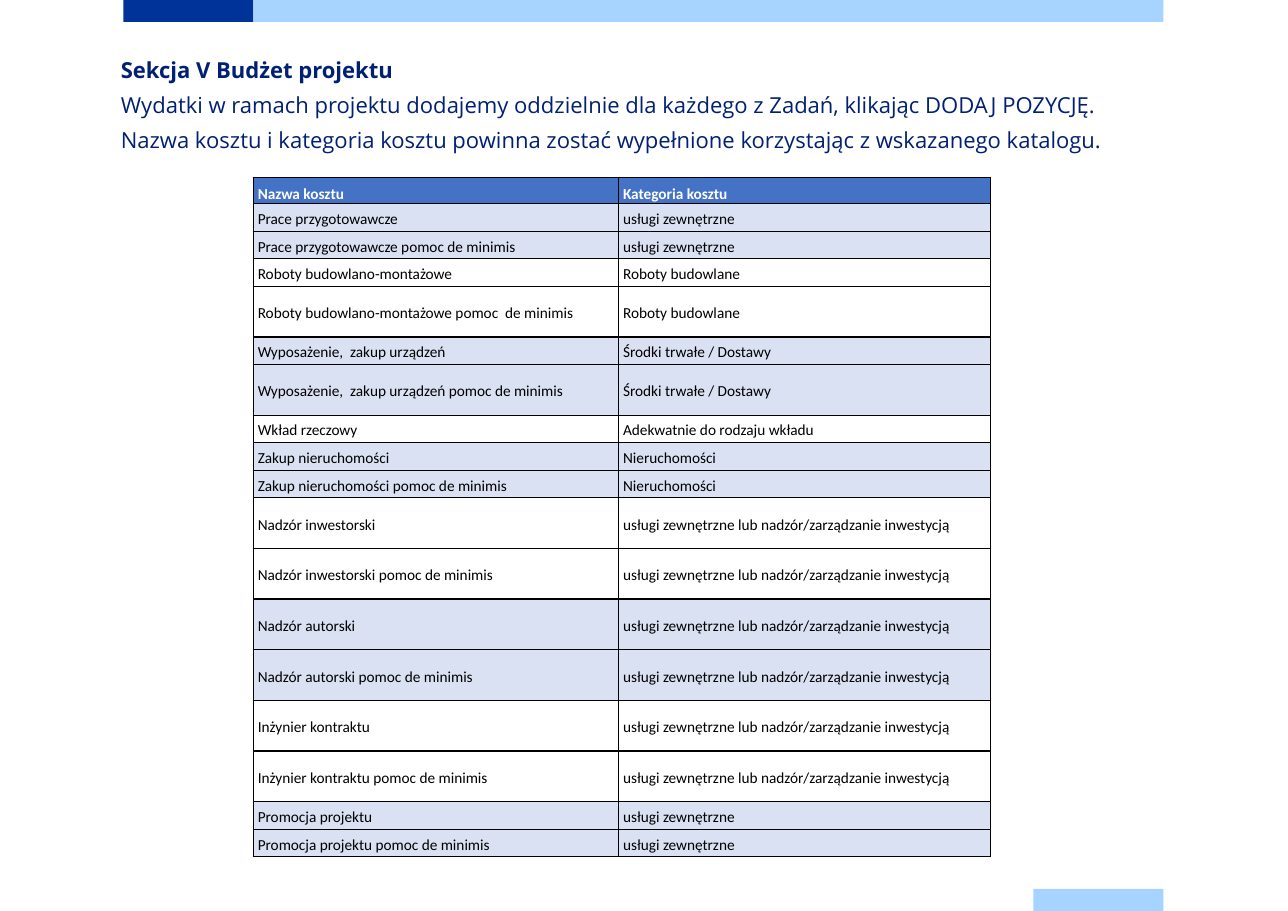
from dataclasses import dataclass

from lxml import etree
from pptx import Presentation
from pptx import util as u
from pptx.dml.color import RGBColor
from pptx.enum import shapes, text
from pptx.oxml import ns

NAVY = RGBColor(0x00, 0x33, 0x99)
SKY = RGBColor(0xA6, 0xD3, 0xFF)
TITLE_BLUE = RGBColor(0x00, 0x20, 0x73)
HEADER_BLUE = RGBColor(0x44, 0x72, 0xC4)
PALE_BLUE = RGBColor(0xD9, 0xE1, 0xF2)
WHITE = RGBColor(0xFF, 0xFF, 0xFF)
BLACK = RGBColor(0x00, 0x00, 0x00)

# Grid: eight columns between the margins, rows as high as the bars
MARGIN, COLUMN, ROW = 1.12, 1.18, 0.2
PAGE_WIDTH, PAGE_HEIGHT = 11.69, 8.27
LAST_ROW = PAGE_HEIGHT / ROW - 1
HEADER_ROW, LOW_ROW, TALL_ROW = 1.2, 1.25, 2.3
COST_COLUMNS = (2.81, 2.86)


@dataclass
class Bar:
    column: float
    row: float
    columns: float
    color: RGBColor


@dataclass
class Cost:
    name: str
    category: str
    shaded: bool = False
    rows: float = LOW_ROW


SERVICES = "usługi zewnętrzne"
SUPERVISION = "usługi zewnętrzne lub nadzór/zarządzanie inwestycją"
WORKS = "Roboty budowlane"
ASSETS = "Środki trwałe / Dostawy"
PROPERTY = "Nieruchomości"

BARS = [Bar(0, 0, 1, NAVY), Bar(1, 0, 7, SKY), Bar(7, LAST_ROW, 1, SKY)]
TITLE_LINES = [
    "Sekcja V Budżet projektu",
    "Wydatki w ramach projektu dodajemy oddzielnie dla każdego z Zadań, klikając DODAJ POZYCJĘ.",
    "Nazwa kosztu i kategoria kosztu powinna zostać wypełnione korzystając z wskazanego katalogu.",
]
COSTS = [
    Cost("Prace przygotowawcze", SERVICES, True),
    Cost("Prace przygotowawcze pomoc de minimis", SERVICES, True),
    Cost("Roboty budowlano-montażowe", WORKS),
    Cost("Roboty budowlano-montażowe pomoc  de minimis", WORKS, rows=TALL_ROW),
    Cost("Wyposażenie,  zakup urządzeń", ASSETS, True),
    Cost("Wyposażenie,  zakup urządzeń pomoc de minimis", ASSETS, True, TALL_ROW),
    Cost("Wkład rzeczowy", "Adekwatnie do rodzaju wkładu"),
    Cost("Zakup nieruchomości", PROPERTY, True),
    Cost("Zakup nieruchomości pomoc de minimis", PROPERTY, True),
    Cost("Nadzór inwestorski", SUPERVISION, rows=TALL_ROW),
    Cost("Nadzór inwestorski pomoc de minimis", SUPERVISION, rows=TALL_ROW),
    Cost("Nadzór autorski", SUPERVISION, True, TALL_ROW),
    Cost("Nadzór autorski pomoc de minimis", SUPERVISION, True, TALL_ROW),
    Cost("Inżynier kontraktu", SUPERVISION, rows=TALL_ROW),
    Cost("Inżynier kontraktu pomoc de minimis", SUPERVISION, rows=TALL_ROW),
    Cost("Promocja projektu", SERVICES, True),
    Cost("Promocja projektu pomoc de minimis", SERVICES, True),
]


def wide(columns: float) -> u.Length:
    return u.Inches(columns * COLUMN)


def high(rows: float) -> u.Length:
    return u.Inches(rows * ROW)


def across(column: float) -> u.Length:
    return u.Inches(MARGIN + column * COLUMN)


def write(para, words: str, *, font: str, size: float, color: RGBColor,
          bold: bool = False, spacing: float = 1, after: float = 0) -> None:
    para.alignment = text.PP_ALIGN.LEFT
    para.line_spacing = spacing
    para.space_after = u.Pt(after)
    span = para.add_run()
    span.text = words
    span.font.name, span.font.size = font, u.Pt(size)
    span.font.bold = bold
    span.font.color.rgb = color


def draw_bar(page, bar: Bar) -> None:
    box = page.shapes.add_shape(
        shapes.MSO_SHAPE.RECTANGLE, across(bar.column), high(bar.row),
        wide(bar.columns), high(1))
    box.shadow.inherit = False
    box.fill.solid()
    box.fill.fore_color.rgb = bar.color
    box.line.fill.background()


def draw_title(page) -> None:
    title = page.shapes.title
    title.left, title.top = across(-0.02), high(2.15)
    title.width, title.height = wide(8), high(5.9)
    frame = title.text_frame
    frame.margin_left = frame.margin_right = frame.margin_top = frame.margin_bottom = 0
    frame.auto_size = text.MSO_AUTO_SIZE.NONE
    frame.word_wrap = True
    frame.vertical_anchor = text.MSO_ANCHOR.TOP
    para = frame.paragraphs[0]
    for index, line in enumerate(TITLE_LINES):
        if index:
            para.add_line_break()
        write(para, line, font="Open Sans", size=14.4, color=TITLE_BLUE,
              bold=index == 0, spacing=1.33)


def add_borders(cell) -> None:
    properties = cell._tc.get_or_add_tcPr()
    for side in ("a:lnL", "a:lnR", "a:lnT", "a:lnB"):
        line = etree.SubElement(properties, ns.qn(side), w=str(u.Pt(1)))
        fill = etree.SubElement(line, ns.qn("a:solidFill"))
        etree.SubElement(fill, ns.qn("a:srgbClr"), val=str(BLACK))


def fill_cell(cell, words: str, *, fill: RGBColor | None, color: RGBColor = BLACK,
              bold: bool = False, anchor=text.MSO_ANCHOR.MIDDLE) -> None:
    cell.margin_left = cell.margin_right = u.Inches(0.04)
    cell.margin_top = cell.margin_bottom = 0
    cell.vertical_anchor = anchor
    add_borders(cell)
    if fill is None:
        cell.fill.background()
    else:
        cell.fill.solid()
        cell.fill.fore_color.rgb = fill
    write(cell.text_frame.paragraphs[0], words, font="Calibri", size=10,
          color=color, bold=bold, spacing=1.19, after=6)


def draw_costs(page) -> None:
    heights = [HEADER_ROW] + [cost.rows for cost in COSTS]
    table = page.shapes.add_table(
        len(heights), len(COST_COLUMNS), across(1), high(8.05),
        wide(sum(COST_COLUMNS)), high(sum(heights))).table
    table.horz_banding = False
    for column, columns in zip(table.columns, COST_COLUMNS):
        column.width = wide(columns)
    for row, rows in zip(table.rows, heights):
        row.height = high(rows)
    for index, heading in enumerate(("Nazwa kosztu", "Kategoria kosztu")):
        fill_cell(table.cell(0, index), heading, fill=HEADER_BLUE, color=WHITE,
                  bold=True, anchor=text.MSO_ANCHOR.BOTTOM)
    for number, cost in enumerate(COSTS, start=1):
        for index, words in enumerate((cost.name, cost.category)):
            fill_cell(table.cell(number, index), words,
                      fill=PALE_BLUE if cost.shaded else None)


def main() -> None:
    deck = Presentation()
    deck.slide_width, deck.slide_height = u.Inches(PAGE_WIDTH), u.Inches(PAGE_HEIGHT)
    page = deck.slides.add_slide(deck.slide_layouts[5])
    # Bars at the top and bottom edges
    for bar in BARS:
        draw_bar(page, bar)
    # Heading and cost catalogue
    draw_title(page)
    draw_costs(page)
    deck.save("out.pptx")


if __name__ == "__main__":
    main()
